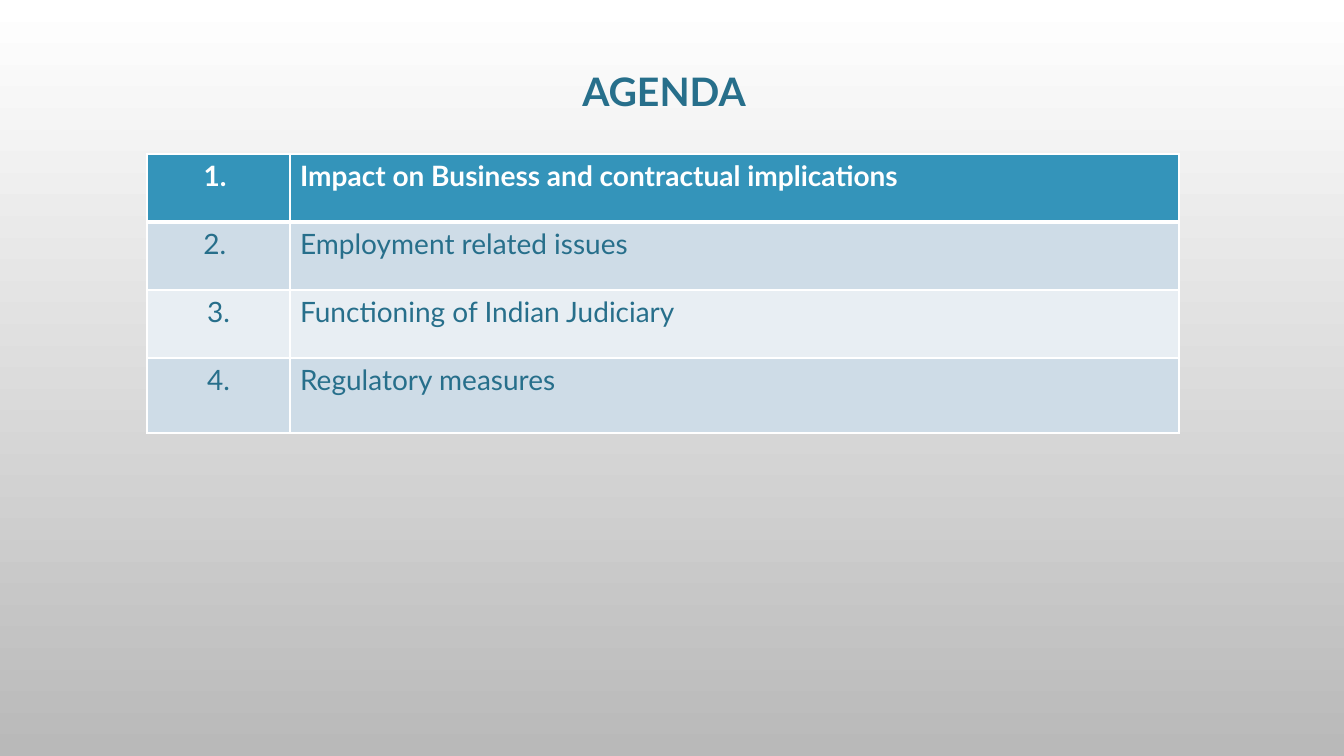
from lxml import etree
from pptx import Presentation, util as u
from pptx.dml.color import RGBColor
from pptx.enum import text
from pptx.oxml.ns import qn

FONT = "Lato"
COLORS = {
    "white": "FFFFFF",
    "grey": "B9B9B9",
    "teal": "276F8B",
    "header": "3494BA",
    "dark band": "CEDCE7",
    "light band": "E8EEF3",
}
AGENDA = [
    ("1. ", "Impact on Business and contractual implications"),
    ("2. ", "Employment related issues"),
    ("3.", "Functioning of Indian Judiciary"),
    ("4.", "Regulatory measures"),
]
COLUMN_WIDTHS = [143, 889]
ROW_HEIGHTS = [68, 68, 68, 75]


def px(length):
    return u.Emu(round(length * 914400 / 100.8))


def color(name):
    return RGBColor.from_string(COLORS[name])


def set_text(frame, content, size, color_name, bold, alignment):
    paragraph = frame.paragraphs[0]
    paragraph.text = content
    paragraph.alignment = alignment
    font = paragraph.font
    font.name, font.size, font.bold = FONT, u.Pt(size), bold
    font.color.rgb = color(color_name)
    return paragraph


def set_background(slide):
    fill = slide.background.fill
    fill.gradient()
    fill.gradient_angle = 270
    for stop, name in zip(fill.gradient_stops, ("white", "grey")):
        stop.color.rgb = color(name)


def add_title(slide, content):
    frame = slide.shapes.add_textbox(px(93), px(49), px(1142), px(90)).text_frame
    frame.word_wrap = True
    frame.vertical_anchor = text.MSO_ANCHOR.MIDDLE
    paragraph = set_text(frame, content, 28, "teal", True, text.PP_ALIGN.CENTER)
    paragraph.line_spacing = 0.9


def set_borders(cell, widths):
    """Draw white borders; widths maps each side (L, R, T, B) to points."""
    properties = cell._tc.get_or_add_tcPr()
    for side, width in widths.items():
        line = etree.SubElement(properties, qn(f"a:ln{side}"), w=str(u.Pt(width)))
        solid = etree.SubElement(line, qn("a:solidFill"))
        etree.SubElement(solid, qn("a:srgbClr"), val=COLORS["white"])


def add_agenda_table(slide):
    table = slide.shapes.add_table(
        len(AGENDA), len(COLUMN_WIDTHS), px(147), px(154),
        px(sum(COLUMN_WIDTHS)), px(sum(ROW_HEIGHTS)),
    ).table
    table.first_row = table.horz_banding = False
    for column, width in zip(table.columns, COLUMN_WIDTHS):
        column.width = px(width)
    for row, height in zip(table.rows, ROW_HEIGHTS):
        row.height = px(height)

    alignments = (text.PP_ALIGN.CENTER, text.PP_ALIGN.LEFT)
    for index, entry in enumerate(AGENDA):
        is_header = index == 0
        band = "header" if is_header else "dark band" if index % 2 else "light band"
        borders = {"L": 1, "R": 1, "T": 3 if index == 1 else 1, "B": 3 if is_header else 1}
        for cell, content, alignment in zip(table.rows[index].cells, entry, alignments):
            set_borders(cell, borders)
            cell.fill.solid()
            cell.fill.fore_color.rgb = color(band)
            set_text(cell.text_frame, content, 20,
                     "white" if is_header else "teal", is_header, alignment)


def main():
    presentation = Presentation()
    presentation.slide_width, presentation.slide_height = px(1344), px(756)
    slide = presentation.slides.add_slide(presentation.slide_layouts[6])
    set_background(slide)
    add_title(slide, "AGENDA")
    add_agenda_table(slide)
    presentation.save("out.pptx")


if __name__ == "__main__":
    main()
